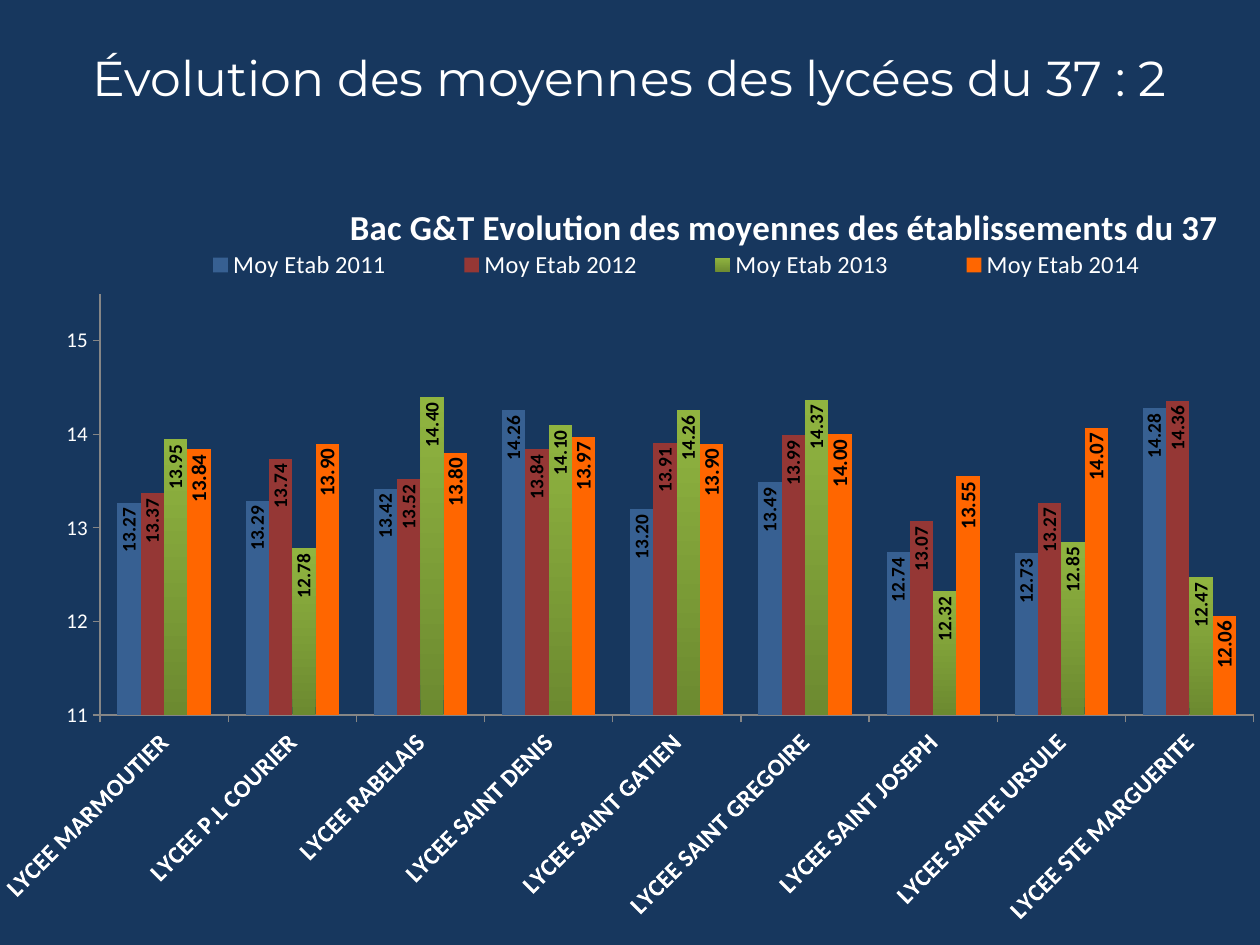
from lxml import etree
from pptx import Presentation
from pptx import util as u
from pptx.chart.data import CategoryChartData
from pptx.dml.color import RGBColor
from pptx.enum import chart as ch, text
from pptx.oxml.ns import qn

COLORS = {
    "back": "17375E", "light": "FFFFFF", "dark": "000000", "axis": "868686",
    "blue": "376092", "red": "953735", "orange": "FF6600",
    "moss": "6C8A30", "green": "90B440",
}
CITIES = ["MARMOUTIER", "P.L COURIER", "RABELAIS", "SAINT DENIS", "SAINT GATIEN",
          "SAINT GREGOIRE", "SAINT JOSEPH", "SAINTE URSULE", "STE MARGUERITE"]
# year, fill colours (two make a gradient), label size, values
YEARS = [
    (2011, ["blue"], 11, [13.27, 13.29, 13.42, 14.26, 13.2, 13.49, 12.74, 12.73, 14.28]),
    (2012, ["red"], 11, [13.37, 13.74, 13.52, 13.84, 13.91, 13.99, 13.07, 13.27, 14.36]),
    (2013, ["moss", "green"], 11,
     [13.95, 12.78, 14.4, 14.1, 14.26, 14.37, 12.32, 12.85, 12.47]),
    (2014, ["orange"], 12, [13.84, 13.9, 13.8, 13.97, 13.9, 14, 13.55, 14.07, 12.06]),
]


def px(n):
    return round(n * 914400 / 126)


def rgb(name):
    return RGBColor.from_string(COLORS[name])


def style(font, size, color="light", bold=False, face="Calibri"):
    font.size, font.bold, font.name = u.Pt(size), bold, face
    font.color.rgb = rgb(color)


def turn(node, angle):
    """Rotate the text of an axis or of data labels, in degrees."""
    body = node.find(qn("c:txPr")).find(qn("a:bodyPr"))
    body.set("rot", str(angle * 60000))
    body.set("vert", "horz")


def lay(node, index, inner=False, **spots):
    """Give a chart part a manual layout, as fractions of the chart."""
    old = node.find(qn("c:layout"))
    if old is not None:
        node.remove(old)
    layout = etree.Element(qn("c:layout"))
    manual = etree.SubElement(layout, qn("c:manualLayout"))
    parts = [("layoutTarget", "inner")] if inner else []
    parts += [("xMode", "edge"), ("yMode", "edge"), *spots.items()]
    for tag, val in parts:
        etree.SubElement(manual, qn("c:" + tag)).set("val", str(val))
    node.insert(index, layout)


def add_title(slide, box):
    title = slide.shapes.title
    title.left, title.top, title.width, title.height = map(px, box)
    frame = title.text_frame
    frame.word_wrap = True
    frame.vertical_anchor = text.MSO_ANCHOR.MIDDLE
    para = frame.paragraphs[0]
    para.alignment = text.PP_ALIGN.CENTER
    run = para.add_run()
    run.text = "Évolution des moyennes des lycées du 37 : 2"
    style(run.font, 28, face="Montserrat")


def set_axes(chart):
    cat, val = chart.category_axis, chart.value_axis
    for axis, size in ((cat, 14), (val, 12)):
        axis.has_major_gridlines = False
        axis.major_tick_mark = ch.XL_TICK_MARK.OUTSIDE
        axis.minor_tick_mark = ch.XL_TICK_MARK.NONE
        axis.format.line.color.rgb = rgb("axis")
        axis.format.line.width = u.Pt(0.75)
        style(axis.tick_labels.font, size, bold=axis is cat)
    turn(cat._element, -45)
    val.minimum_scale, val.maximum_scale, val.major_unit = 11, 15.5, 1
    val.tick_labels.number_format = "0"
    val.tick_labels.number_format_is_linked = False


def set_bars(plot):
    plot.gap_width, plot.overlap, plot.vary_by_categories = 150, 0, False
    for series, (_, fills, size, _) in zip(plot.series, YEARS):
        series.invert_if_negative = False
        fill = series.format.fill
        if len(fills) == 1:
            fill.solid()
            fill.fore_color.rgb = rgb(fills[0])
        else:
            fill.gradient()
            fill.gradient_angle = 90
            for stop, name in zip(fill.gradient_stops, fills):
                stop.color.rgb = rgb(name)
        labels = series.data_labels
        labels.show_value = True
        labels.number_format = "0.00"
        labels.number_format_is_linked = False
        labels.position = ch.XL_LABEL_POSITION.INSIDE_END
        style(labels.font, size, "dark", True)
        turn(labels._element, -90)


def add_bars(slide, box):
    data = CategoryChartData(number_format="0.00")
    data.categories = ["LYCEE " + city for city in CITIES]
    for year, _, _, vals in YEARS:
        data.add_series(f"Moy Etab {year}", vals)
    kind = ch.XL_CHART_TYPE.COLUMN_CLUSTERED
    chart = slide.shapes.add_chart(kind, *map(px, box), data).chart
    style(chart.font, 10, "dark")

    chart.has_title = True
    run = chart.chart_title.text_frame.paragraphs[0].add_run()
    run.text = "Bac G&T Evolution des moyennes des établissements du 37"
    style(run.font, 20, bold=True)
    lay(chart.chart_title._element, 1, x=0.27, y=0.02)

    chart.has_legend = True
    legend = chart.legend
    legend.position = ch.XL_LEGEND_POSITION.TOP
    legend.include_in_layout = False
    style(legend.font, 14)
    lay(legend._element, 1, x=0.11, y=0.08, w=0.85, h=0.06)

    set_axes(chart)
    set_bars(chart.plots[0])
    area = chart._chartSpace.find(".//" + qn("c:plotArea"))
    lay(area, 0, inner=True, x=0.076, y=0.148, w=0.919, h=0.551)


def main():
    deck = Presentation()
    deck.slide_width, deck.slide_height = px(1260), px(945)
    slide = deck.slides.add_slide(deck.slide_layouts[5])
    back = slide.background.fill
    back.solid()
    back.fore_color.rgb = rgb("back")
    add_title(slide, (16, 26, 1227, 102))
    add_bars(slide, (0, 181, 1260, 764))
    deck.save("out.pptx")


if __name__ == "__main__":
    main()
